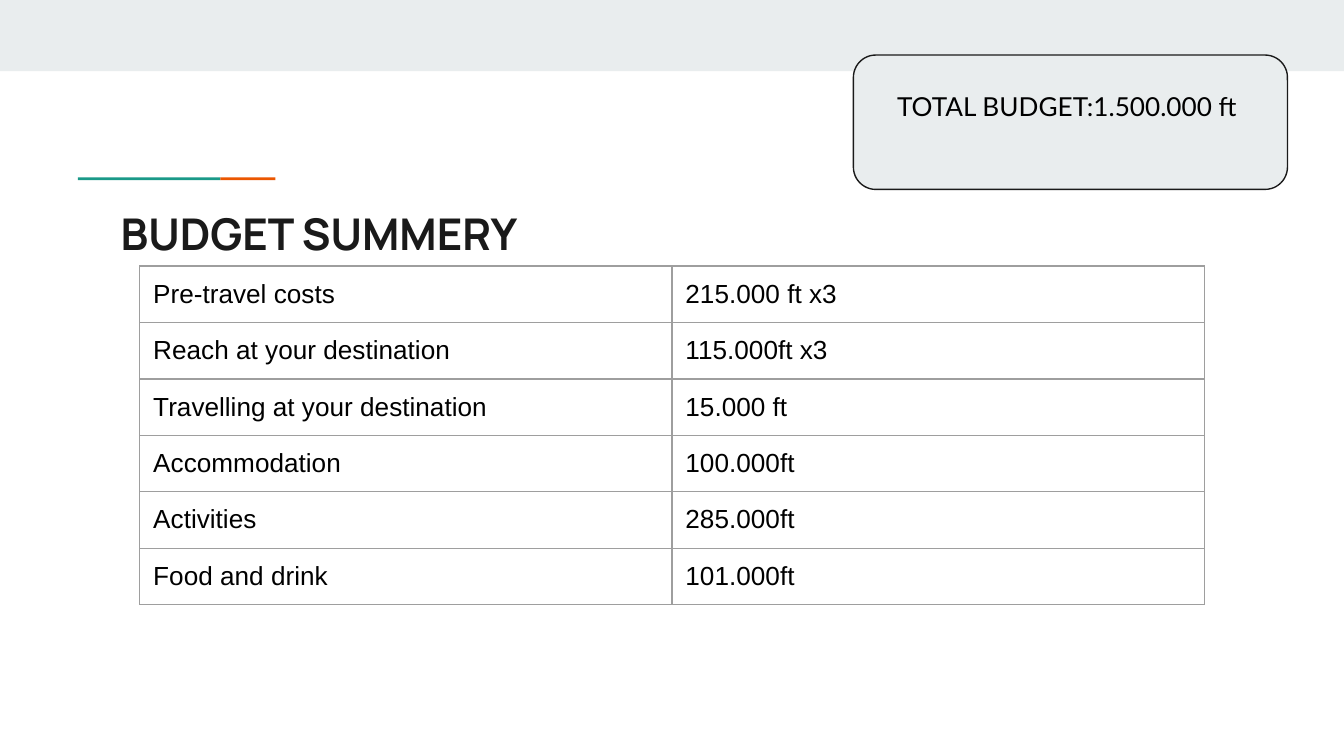
from lxml.etree import SubElement
from pptx import Presentation
from pptx.dml.color import RGBColor
from pptx.enum.shapes import MSO_SHAPE as Shape
from pptx.enum.text import MSO_ANCHOR as Anchor, PP_ALIGN as Align
from pptx.oxml.ns import qn
from pptx.util import Inches, Pt

# Content
TITLE = "BUDGET SUMMERY"
TOTAL = "TOTAL BUDGET:1.500.000 ft "
COSTS = [
    ("Pre-travel costs", "215.000 ft x3"),
    ("Reach at your destination", "115.000ft x3"),
    ("Travelling at your destination", "15.000 ft"),
    ("Accommodation", "100.000ft"),
    ("Activities", "285.000ft"),
    ("Food and drink", "101.000ft"),
]
ACCENTS = [("teal", 0.58, 1.06), ("orange", 1.64, 0.41)]  # colour, left, width

THEME = {
    "band": "E9EDEE", "teal": "1A9988", "orange": "EB5600",
    "dark": "1A1A1A", "black": "000000", "grid": "9E9E9E",
    "title_size": 23.4, "body_size": 14, "line": 0.75,
}
PAGE_WIDTH = 10
COLUMN_WIDTH, ROW_HEIGHT, INSET = 3.96, 0.42, 0.1


def colour(name):
    return RGBColor.from_string(THEME[name])


def add_box(page, kind, left, top, width, height, fill, line=None):
    box = page.shapes.add_shape(
        kind, Inches(left), Inches(top), Inches(width), Inches(height))
    box.shadow.inherit = False
    box.fill.solid()
    box.fill.fore_color.rgb = colour(fill)
    if line:
        box.line.color.rgb = colour(line)
        box.line.width = Pt(THEME["line"])
    else:
        box.line.fill.background()
    return box


def set_insets(target, bottom=INSET):
    target.margin_left = target.margin_right = target.margin_top = Inches(INSET)
    target.margin_bottom = Inches(bottom)


def write(frame, text, font="Arial", size="body_size", ink="black",
          bold=False, align=Align.LEFT):
    frame.word_wrap = True
    para = frame.paragraphs[0]
    para.alignment = align
    span = para.add_run()
    span.text = text
    span.font.name = font
    span.font.size = Pt(THEME[size])
    span.font.bold = bold
    span.font.color.rgb = colour(ink)


def add_borders(cell):
    properties = cell._tc.get_or_add_tcPr()
    for position, side in enumerate(("lnL", "lnR", "lnT", "lnB")):
        line = SubElement(properties, qn(f"a:{side}"), w=str(Pt(THEME["line"])))
        fill = SubElement(line, qn("a:solidFill"))
        SubElement(fill, qn("a:srgbClr"), val=THEME["grid"])
        properties.insert(position, line)  # borders come before the cell fill


def add_cost_table(page, left, top):
    rows, columns = len(COSTS), len(COSTS[0])
    table = page.shapes.add_table(
        rows, columns, Inches(left), Inches(top),
        Inches(columns * COLUMN_WIDTH), Inches(rows * ROW_HEIGHT)).table
    table.first_row = table.horz_banding = False
    for column in table.columns:
        column.width = Inches(COLUMN_WIDTH)
    for row, texts in zip(table.rows, COSTS):
        row.height = Inches(ROW_HEIGHT)
        for cell, text in zip(row.cells, texts):
            cell.fill.background()
            set_insets(cell, bottom=0.08)  # keeps the row from growing
            add_borders(cell)
            write(cell.text_frame, text)


def main():
    deck = Presentation()
    deck.slide_width = Inches(PAGE_WIDTH)
    deck.slide_height = Inches(PAGE_WIDTH * 9 / 16)
    page = deck.slides.add_slide(deck.slide_layouts[6])

    # Top band and accent rule
    add_box(page, Shape.RECTANGLE, 0, 0, PAGE_WIDTH, 0.53, "band")
    for name, left, width in ACCENTS:
        add_box(page, Shape.RECTANGLE, left, 1.32, width, 0.02, name)

    # Title
    title = page.shapes.add_textbox(
        Inches(0.8), Inches(1.44), Inches(8.41), Inches(0.59)).text_frame
    set_insets(title)
    write(title, TITLE, font="Manrope", size="title_size", ink="dark", bold=True)

    # Cost table
    add_cost_table(page, 1.04, 1.98)

    # Total budget, with a deeper bottom inset to raise the text
    total = add_box(page, Shape.FLOWCHART_ALTERNATE_PROCESS,
                    6.35, 0.41, 3.23, 1, "band", line="dark").text_frame
    set_insets(total, bottom=0.34)
    total.vertical_anchor = Anchor.MIDDLE
    write(total, TOTAL, font="Lato", align=Align.CENTER)

    deck.save("out.pptx")


if __name__ == "__main__":
    main()
